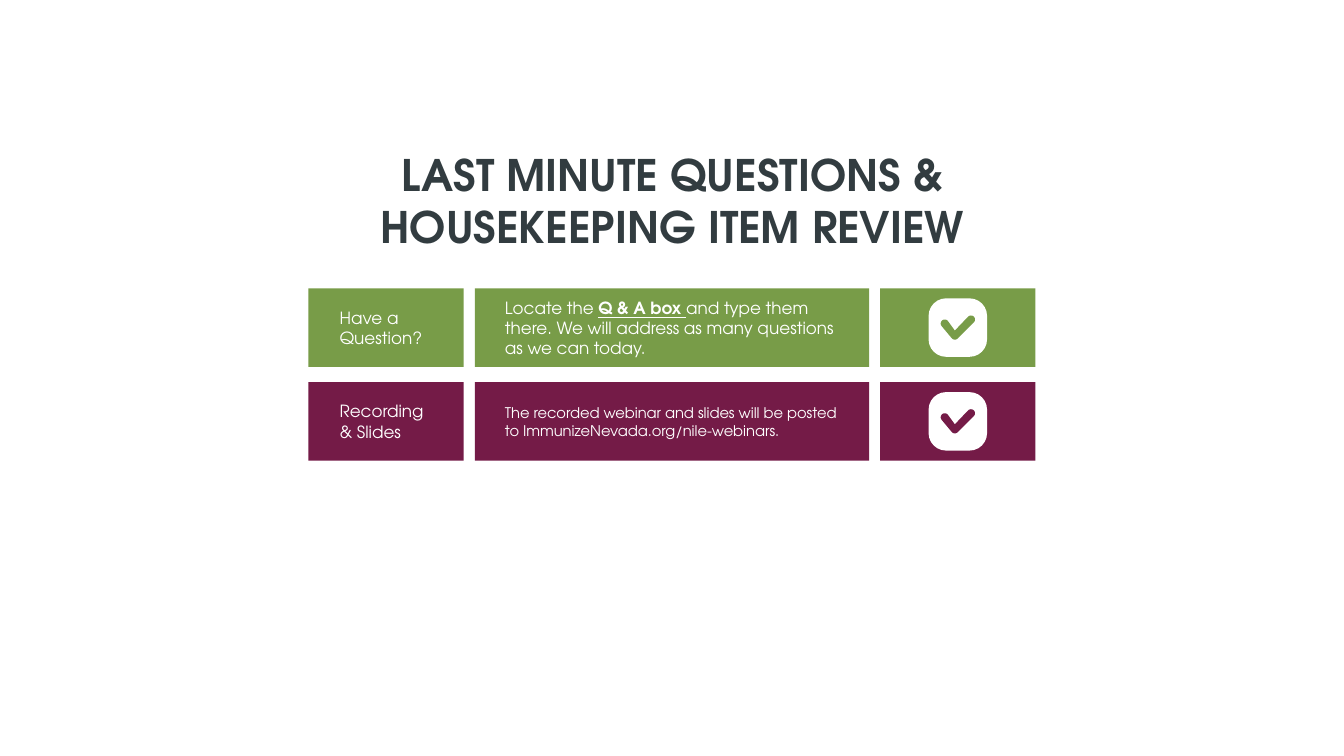
import math
from dataclasses import dataclass

from pptx import Presentation, util as u
from pptx.dml.color import RGBColor
from pptx.enum import shapes, text


@dataclass(frozen=True)
class Theme:
    font: str = "TeX Gyre Adventor"
    ink: str = "323C40"
    white: str = "FFFFFF"
    green: str = "789C48"
    plum: str = "741B47"
    title_size: float = 31
    body_size: float = 12
    small_size: float = 10.5


THEME = Theme()

# Grid of the banner rows, in inches
ROW_TOP, ROW_PITCH, ROW_HEIGHT = 2.86, 0.93, 0.78
LABEL_WIDTH, DETAIL_WIDTH, GAP = 1.54, 3.91, 0.11
LABEL_LEFT = 3.06
DETAIL_LEFT = LABEL_LEFT + LABEL_WIDTH + GAP
CHECK_LEFT = DETAIL_LEFT + DETAIL_WIDTH + GAP
LABEL_INDENT, DETAIL_INDENT = 0.21, 0.2
BADGE = 0.58

# Each row: colour, label, detail runs as (words, emphasised), detail size
ROWS = [
    (THEME.green, "Have a Question?",
     [("Locate the ", False), ("Q & A box ", True),
      ("and type them there. We will address as many questions as we can today.", False)],
     THEME.body_size),
    (THEME.plum, "Recording & Slides",
     [("The recorded webinar and slides will be posted to "
       "ImmunizeNevada.org/nile-webinars.", False)],
     THEME.small_size),
]


def paint(shape, colour):
    shape.shadow.inherit = False
    shape.fill.solid()
    shape.fill.fore_color.rgb = RGBColor.from_string(colour)
    shape.line.fill.background()


def add_block(slide, kind, left, top, width, height, colour):
    shape = slide.shapes.add_shape(
        kind, u.Inches(left), u.Inches(top), u.Inches(width), u.Inches(height))
    paint(shape, colour)
    return shape


def add_text(slide, left, top, width, height, runs, size, colour,
             align=text.PP_ALIGN.LEFT, bold=None):
    box = slide.shapes.add_textbox(
        u.Inches(left), u.Inches(top), u.Inches(width), u.Inches(height))
    frame = box.text_frame
    frame.word_wrap = True
    frame.vertical_anchor = text.MSO_ANCHOR.MIDDLE
    frame.margin_left = frame.margin_right = u.Inches(0.1)
    frame.margin_top = frame.margin_bottom = u.Inches(0.1)
    paragraph = frame.paragraphs[0]
    paragraph.alignment = align
    paragraph.font.name = THEME.font
    paragraph.font.size = u.Pt(size)
    paragraph.font.bold = bold
    paragraph.font.color.rgb = RGBColor.from_string(colour)
    for words, emphasised in runs:
        run = paragraph.add_run()
        run.text = words
        if emphasised:
            run.font.bold = run.font.underline = True


def add_tick(slide, centre_x, centre_y, colour):
    """Draw a check mark with rounded ends, centred on the given point."""
    radius = 0.04
    # Each round corner: offset from the centre, first and last angle
    corners = [(-0.13, -0.04, 321, 141), (-0.03, 0.08, 141, 43), (0.13, -0.08, 43, -137)]
    offsets = []
    for x, y, first, last in corners:
        for step in range(13):
            angle = math.radians(first + (last - first) * step / 12)
            offsets.append((x + radius * math.cos(angle), y + radius * math.sin(angle)))
    offsets.append((-0.03, 0.03))  # inner corner
    points = [(u.Inches(centre_x + x), u.Inches(centre_y + y)) for x, y in offsets]
    builder = slide.shapes.build_freeform(*points[0])
    builder.add_line_segments(points[1:], close=True)
    paint(builder.convert_to_shape(), colour)


def add_row(slide, index, colour, label, detail, detail_size):
    top = ROW_TOP + index * ROW_PITCH
    middle = top + ROW_HEIGHT / 2
    # Coloured cells
    for left, width in [(LABEL_LEFT, LABEL_WIDTH), (DETAIL_LEFT, DETAIL_WIDTH),
                        (CHECK_LEFT, LABEL_WIDTH)]:
        add_block(slide, shapes.MSO_SHAPE.RECTANGLE, left, top, width, ROW_HEIGHT, colour)
    # Words
    add_text(slide, LABEL_LEFT + LABEL_INDENT, middle - 0.2, LABEL_WIDTH - 2 * LABEL_INDENT,
             0.4, [(label, False)], THEME.body_size, THEME.white)
    add_text(slide, DETAIL_LEFT + DETAIL_INDENT, middle - BADGE / 2,
             DETAIL_WIDTH - 2 * DETAIL_INDENT, BADGE, detail, detail_size, THEME.white)
    # Badge with its check mark
    centre = CHECK_LEFT + LABEL_WIDTH / 2
    badge = add_block(slide, shapes.MSO_SHAPE.ROUNDED_RECTANGLE, centre - BADGE / 2,
                      middle - BADGE / 2, BADGE, BADGE, THEME.white)
    badge.adjustments[0] = 0.3
    add_tick(slide, centre, middle, colour)


def main():
    presentation = Presentation()
    presentation.slide_width = u.Inches(13.33)
    presentation.slide_height = u.Inches(7.5)
    slide = presentation.slides.add_slide(presentation.slide_layouts[6])
    # Title
    add_text(slide, 2.44, 1.72, 8.45, 0.53,
             [("LAST MINUTE QUESTIONS & HOUSEKEEPING ITEM REVIEW", False)],
             THEME.title_size, THEME.ink, text.PP_ALIGN.CENTER, bold=True)
    # Banner rows
    for index, row in enumerate(ROWS):
        add_row(slide, index, *row)
    presentation.save("out.pptx")


if __name__ == "__main__":
    main()
